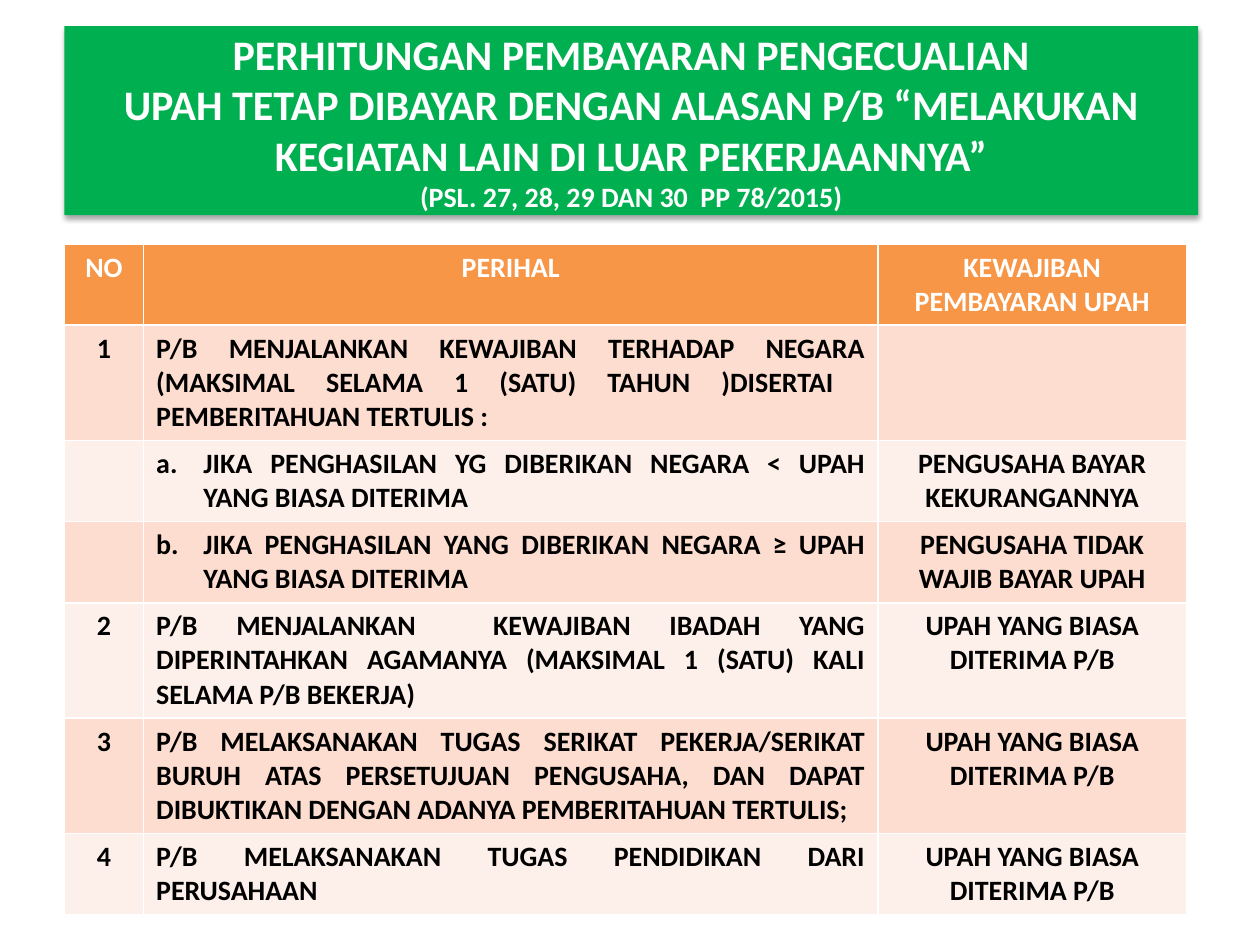
import lxml.etree
import pptx
import pptx.dml.color
import pptx.enum.text
import pptx.oxml
import pptx.oxml.ns
import pptx.util

Pt = pptx.util.Pt
RGBColor = pptx.dml.color.RGBColor
ALIGN = pptx.enum.text.PP_ALIGN
ANCHOR = pptx.enum.text.MSO_ANCHOR

TITLE_LINES = [
    ("PERHITUNGAN PEMBAYARAN PENGECUALIAN", 24),
    ("UPAH TETAP DIBAYAR DENGAN ALASAN P/B “MELAKUKAN KEGIATAN LAIN DI LUAR PEKERJAANNYA”", 24),
    ("(PSL. 27, 28, 29 DAN 30  PP 78/2015)", 16),
]
HEADER = ("NO", "PERIHAL", "KEWAJIBAN PEMBAYARAN UPAH")
USUAL_WAGE = "UPAH YANG BIASA DITERIMA P/B"
ROWS = [
    ("1", "P/B MENJALANKAN KEWAJIBAN TERHADAP NEGARA (MAKSIMAL SELAMA 1 (SATU) TAHUN )DISERTAI  "
          "PEMBERITAHUAN TERTULIS :", ""),
    ("", "JIKA PENGHASILAN YG DIBERIKAN NEGARA < UPAH YANG BIASA DITERIMA",
     "PENGUSAHA BAYAR KEKURANGANNYA"),
    ("", "JIKA PENGHASILAN YANG DIBERIKAN NEGARA ≥ UPAH YANG BIASA DITERIMA",
     "PENGUSAHA TIDAK WAJIB BAYAR UPAH"),
    ("2", "P/B MENJALANKAN  KEWAJIBAN IBADAH YANG DIPERINTAHKAN AGAMANYA (MAKSIMAL 1 (SATU) KALI "
          "SELAMA P/B BEKERJA)", USUAL_WAGE),
    ("3", "P/B MELAKSANAKAN TUGAS SERIKAT PEKERJA/SERIKAT BURUH ATAS PERSETUJUAN PENGUSAHA, DAN DAPAT "
          "DIBUKTIKAN DENGAN ADANYA PEMBERITAHUAN TERTULIS;", USUAL_WAGE),
    ("4", "P/B MELAKSANAKAN TUGAS PENDIDIKAN DARI PERUSAHAAN", USUAL_WAGE),
]
LETTERED_ROWS = {2: 1, 3: 2}  # table row: number of its letter

WHITE = RGBColor(0xFF, 0xFF, 0xFF)
BLACK = RGBColor(0x00, 0x00, 0x00)
GREEN = RGBColor(0x00, 0xB0, 0x50)
ORANGE = RGBColor(0xF7, 0x96, 0x46)
BANDS = (RGBColor(0xFC, 0xDD, 0xCF), RGBColor(0xFD, 0xEF, 0xE9))

LEFT = 36.75
TITLE_BOX = {"left": LEFT, "top": 15, "width": 648, "height": 108}
TABLE_TOP = 139.5
COLUMN_WIDTHS = (45.35, 419.6, 176.4)
ROW_HEIGHT = 29.2
LETTER_INDENT = 27


def format_font(font, size, color):
    for name, value in {"name": "Calibri", "size": Pt(size), "bold": True}.items():
        setattr(font, name, value)
    font.color.rgb = color


def add_shadow(shape):
    shape._element.spPr.append(pptx.oxml.parse_xml(
        f'<a:effectLst {pptx.oxml.ns.nsdecls("a")}>'
        f'<a:outerShdw blurRad="{Pt(3.1)}" dist="{Pt(1.8)}" dir="5400000" rotWithShape="0">'
        '<a:srgbClr val="000000"><a:alpha val="35000"/></a:srgbClr>'
        '</a:outerShdw></a:effectLst>'))


def add_letter(paragraph, number):
    """Number the paragraph a., b., ... with a hanging indent."""
    properties = paragraph._p.get_or_add_pPr()
    properties.set("marL", str(Pt(LETTER_INDENT)))
    properties.set("indent", str(-Pt(LETTER_INDENT)))
    lxml.etree.SubElement(properties, pptx.oxml.ns.qn("a:buAutoNum"),
                          type="alphaLcPeriod", startAt=str(number))


def fill_title(title):
    for name, value in TITLE_BOX.items():
        setattr(title, name, Pt(value))
    title.fill.solid()
    title.fill.fore_color.rgb = GREEN
    add_shadow(title)
    frame = title.text_frame
    frame.auto_size = pptx.enum.text.MSO_AUTO_SIZE.NONE
    frame.word_wrap = True
    frame.vertical_anchor = ANCHOR.MIDDLE
    paragraph = frame.paragraphs[0]
    paragraph.alignment = ALIGN.CENTER
    for index, (text, size) in enumerate(TITLE_LINES):
        if index:
            paragraph.add_line_break()
        run = paragraph.add_run()
        run.text = text
        format_font(run.font, size, WHITE)


def add_wage_table(slide):
    content = [HEADER] + ROWS
    table = slide.shapes.add_table(
        len(content), len(HEADER), Pt(LEFT), Pt(TABLE_TOP),
        Pt(sum(COLUMN_WIDTHS)), Pt(ROW_HEIGHT * len(content))).table
    for column, width in zip(table.columns, COLUMN_WIDTHS):
        column.width = Pt(width)
    for row_index, texts in enumerate(content):
        table.rows[row_index].height = Pt(ROW_HEIGHT)
        is_header = row_index == 0
        for column_index, text in enumerate(texts):
            cell = table.cell(row_index, column_index)
            cell.fill.solid()
            cell.fill.fore_color.rgb = ORANGE if is_header else BANDS[(row_index - 1) % 2]
            paragraph = cell.text_frame.paragraphs[0]
            is_matter = column_index == 1 and not is_header
            paragraph.alignment = ALIGN.JUSTIFY if is_matter else ALIGN.CENTER
            if is_matter and row_index in LETTERED_ROWS:
                add_letter(paragraph, LETTERED_ROWS[row_index])
            if text:
                run = paragraph.add_run()
                run.text = text
                format_font(run.font, 16, WHITE if is_header else BLACK)


def main():
    presentation = pptx.Presentation()
    presentation.slide_width, presentation.slide_height = Pt(720), Pt(540)
    slide = presentation.slides.add_slide(presentation.slide_layouts[5])
    fill_title(slide.shapes.title)
    add_wage_table(slide)
    presentation.save("out.pptx")


if __name__ == "__main__":
    main()
